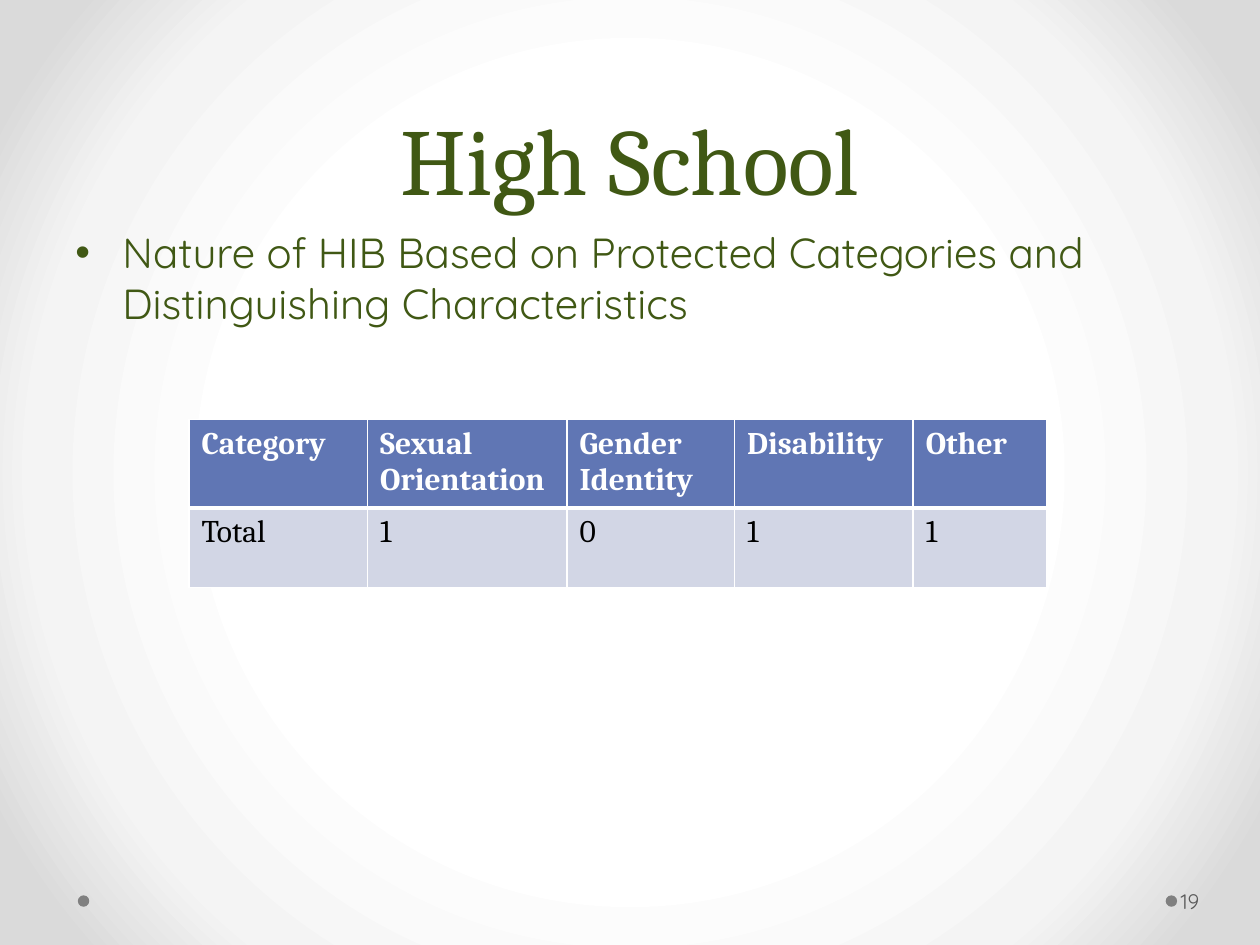
from lxml.etree import SubElement
from pptx import Presentation
from pptx.dml.color import RGBColor
from pptx.enum.shapes import MSO_SHAPE
from pptx.enum.text import MSO_ANCHOR, PP_ALIGN
from pptx.oxml.ns import qn
from pptx.util import Cm, Pt

GREEN = RGBColor(0x40, 0x58, 0x14)
DOT_GRAY = RGBColor(0x80, 0x80, 0x80)
NUMBER_GRAY = RGBColor(0x59, 0x59, 0x59)
HEADER_BLUE = RGBColor(0x60, 0x76, 0xB4)
ROW_BLUE = RGBColor(0xD2, 0xD6, 0xE5)
WHITE = RGBColor(0xFF, 0xFF, 0xFF)
PALE_GRAY = RGBColor(0xF4, 0xF4, 0xF4)
EDGE_GRAY = RGBColor(0xDA, 0xDA, 0xDA)
BLACK = RGBColor(0, 0, 0)

HEADING_FONT = "Cambria"
BODY_FONT = "Quicksand"

BACKGROUND_STOPS = [(50, WHITE), (76, PALE_GRAY), (92, EDGE_GRAY)]
COLUMN_WIDTHS = [3.6, 4.02, 3.38, 3.6, 2.7]
ROW_HEIGHTS = [1.04, 1.6]
COUNTS = [
    ["Category", "Sexual Orientation", "Gender Identity", "Disability", "Other"],
    ["Total", "1", "0", "1", "1"],
]


def write_text(frame, text, *, font, size, color, bold=False,
               align=PP_ALIGN.LEFT, line_spacing=None, space_before=None):
    paragraph = frame.paragraphs[0]
    paragraph.alignment = align
    paragraph.line_spacing = line_spacing
    paragraph.space_before = space_before
    run = paragraph.add_run()
    run.text = text
    run.font.name = font
    run.font.size = Pt(size)
    run.font.bold = bold
    run.font.color.rgb = color
    return paragraph


def add_frame(slide, left, top, width, height, anchor=MSO_ANCHOR.TOP):
    frame = slide.shapes.add_textbox(
        Cm(left), Cm(top), Cm(width), Cm(height)).text_frame
    frame.word_wrap = True
    frame.vertical_anchor = anchor
    return frame


def add_solid(parent, color):
    solid = SubElement(parent, qn("a:solidFill"))
    SubElement(solid, qn("a:srgbClr"), val=str(color))


def paint_background(slide):
    slide.background.fill.gradient()
    gradient = next(slide.element.iter(qn("a:gradFill")))
    for child in list(gradient):
        gradient.remove(child)
    stops = SubElement(gradient, qn("a:gsLst"))
    for position, color in BACKGROUND_STOPS:
        stop = SubElement(stops, qn("a:gs"), pos=str(position * 1000))
        SubElement(stop, qn("a:srgbClr"), val=str(color))
    circle = SubElement(gradient, qn("a:path"), path="circle")
    SubElement(circle, qn("a:fillToRect"),
               dict.fromkeys("ltrb", "50000"))


def add_dot(slide, left):
    dot = slide.shapes.add_shape(
        MSO_SHAPE.OVAL, Cm(left), Cm(18.05), Cm(0.23), Cm(0.23))
    dot.shadow.inherit = False
    dot.fill.solid()
    dot.fill.fore_color.rgb = DOT_GRAY
    dot.line.fill.background()


def add_bullet(paragraph, indent):
    properties = paragraph._p.get_or_add_pPr()
    properties.set("marL", str(indent))
    properties.set("indent", str(-indent))
    SubElement(properties, qn("a:buFont"), typeface="Arial")
    SubElement(properties, qn("a:buChar"), char="•")


def style_cell(cell, fill, border_widths):
    properties = cell._tc.get_or_add_tcPr()
    for side, width in border_widths.items():
        border = SubElement(properties, qn(f"a:ln{side}"), w=str(Pt(width)))
        add_solid(border, WHITE)
    cell.fill.solid()
    cell.fill.fore_color.rgb = fill


def add_counts_table(slide):
    table = slide.shapes.add_table(
        len(COUNTS), len(COLUMN_WIDTHS), Cm(3.81), Cm(8.46),
        Cm(sum(COLUMN_WIDTHS)), Cm(sum(ROW_HEIGHTS))).table
    for column, width in zip(table.columns, COLUMN_WIDTHS):
        column.width = Cm(width)
    for row, height, texts in zip(table.rows, ROW_HEIGHTS, COUNTS):
        row.height = Cm(height)
        header = texts is COUNTS[0]
        borders = dict(L=1, R=1, T=1 if header else 3, B=3 if header else 1)
        for cell, text in zip(row.cells, texts):
            style_cell(cell, HEADER_BLUE if header else ROW_BLUE, borders)
            write_text(cell.text_frame, text, font=HEADING_FONT, size=18,
                       color=WHITE if header else BLACK, bold=header)


def main():
    presentation = Presentation()
    presentation.slide_width = Cm(25.4)
    presentation.slide_height = Cm(19.05)
    slide = presentation.slides.add_slide(presentation.slide_layouts[6])

    paint_background(slide)
    for left in (23.5, 1.57):
        add_dot(slide, left)

    title = add_frame(slide, 1.27, 0, 22.86, 4.45, MSO_ANCHOR.BOTTOM)
    write_text(title, "High School", font=HEADING_FONT, size=54, color=GREEN,
               align=PP_ALIGN.CENTER, line_spacing=Pt(58))

    body = add_frame(slide, 1.27, 4.45, 22.86, 12.57)
    topic = write_text(
        body,
        "Nature of HIB Based on Protected Categories and "
        "Distinguishing Characteristics",
        font=BODY_FONT, size=24, color=GREEN, space_before=Pt(4.8))
    add_bullet(topic, Cm(0.95))

    page = add_frame(slide, 23.72, 17.65, 1.55, 1.02, MSO_ANCHOR.MIDDLE)
    page.margin_left = Cm(0.08)
    page.margin_right = Cm(0.13)
    write_text(page, "19", font=BODY_FONT, size=12, color=NUMBER_GRAY)

    add_counts_table(slide)
    presentation.save("out.pptx")


if __name__ == "__main__":
    main()
